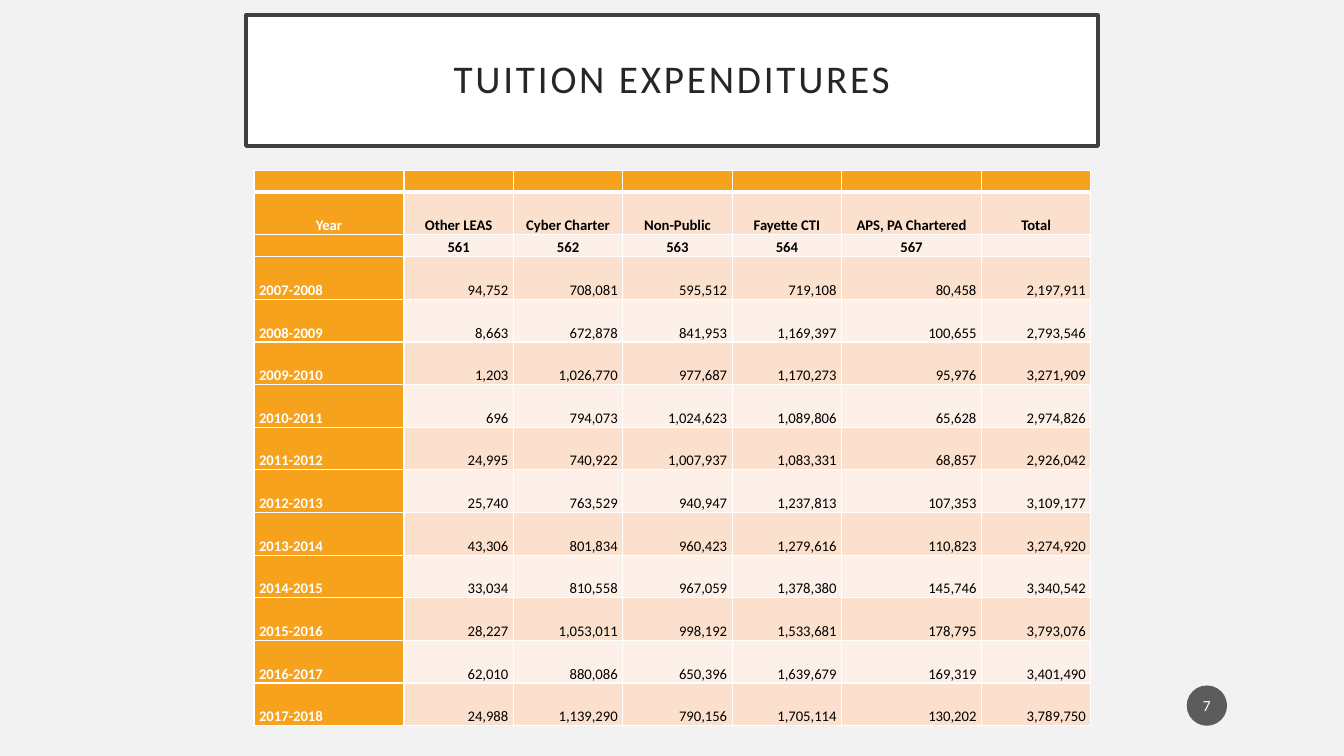
import pptx
import pptx.util
import pptx.dml.color
import pptx.enum.shapes
import pptx.enum.text
import pptx.oxml

COLORS = {
    "page": "F2F2F2", "white": "FFFFFF", "black": "000000",
    "frame": "404040", "title": "262626", "badge": "1D1D1D",
    "orange": "F6A21D", "band_dark": "FBE0CD", "band_light": "FDF0E8",
}
NS = 'xmlns:a="http://schemas.openxmlformats.org/drawingml/2006/main"'
ALIGN = pptx.enum.text.PP_ALIGN
ANCHOR = pptx.enum.text.MSO_ANCHOR
SHAPE = pptx.enum.shapes.MSO_SHAPE

EXPENDITURES = [
    ["", "", "", "", "", "", ""],
    ["Year", "Other LEAS", "Cyber Charter", "Non-Public", "Fayette CTI", "APS, PA Chartered", "Total"],
    ["", "561", "562", "563", "564", "567", ""],
    ["2007-2008", "94,752", "708,081", "595,512", "719,108", "80,458", "2,197,911"],
    ["2008-2009", "8,663", "672,878", "841,953", "1,169,397", "100,655", "2,793,546"],
    ["2009-2010", "1,203", "1,026,770", "977,687", "1,170,273", "95,976", "3,271,909"],
    ["2010-2011", "696", "794,073", "1,024,623", "1,089,806", "65,628", "2,974,826"],
    ["2011-2012", "24,995", "740,922", "1,007,937", "1,083,331", "68,857", "2,926,042"],
    ["2012-2013", "25,740", "763,529", "940,947", "1,237,813", "107,353", "3,109,177"],
    ["2013-2014", "43,306", "801,834", "960,423", "1,279,616", "110,823", "3,274,920"],
    ["2014-2015", "33,034", "810,558", "967,059", "1,378,380", "145,746", "3,340,542"],
    ["2015-2016", "28,227", "1,053,011", "998,192", "1,533,681", "178,795", "3,793,076"],
    ["2016-2017", "62,010", "880,086", "650,396", "1,639,679", "169,319", "3,401,490"],
    ["2017-2018", "24,988", "1,139,290", "790,156", "1,705,114", "130,202", "3,789,750"],
]
HEADER_ROWS = 3


def rgb(name):
    return pptx.dml.color.RGBColor.from_string(COLORS[name])


class Deck:
    """Slide style; all lengths are percentages of the slide's size."""
    font = "Calibri"

    def __init__(self):
        self.prs = pptx.Presentation()
        self.prs.slide_width = pptx.util.Inches(13.33)
        self.prs.slide_height = pptx.util.Inches(7.5)
        self.s = self.prs.slides.add_slide(self.prs.slide_layouts[6])
        self.s.background.fill.solid()
        self.s.background.fill.fore_color.rgb = rgb("page")

    def x(self, share):
        return round(self.prs.slide_width * share / 100)

    def y(self, share):
        return round(self.prs.slide_height * share / 100)

    def box(self, left, top, width, height):
        return self.x(left), self.y(top), self.x(width), self.y(height)

    def text(self, p, text, size, color, align, bold=False, leading=None, spacing=0):
        p.alignment = align
        p.line_spacing = leading
        p.font.name = self.font
        p.font.size = pptx.util.Pt(size)
        p.font.bold = bold
        p.font.color.rgb = rgb(color)
        if text:
            r = p.add_run()
            r.text = text
            if spacing:
                r._r.get_or_add_rPr().set("spc", str(spacing * 100))

    def shape(self, kind, at, fill, text, size, color, insets, line=None, alpha=None, **style):
        sp = self.s.shapes.add_shape(kind, *self.box(*at))
        sp.shadow.inherit = False
        sp.fill.solid()
        sp.fill.fore_color.rgb = rgb(fill)
        if alpha:
            clr = sp._element.spPr.find(".//{*}solidFill/{*}srgbClr")
            clr.append(pptx.oxml.parse_xml(f'<a:alpha {NS} val="{alpha * 1000}"/>'))
        if line:
            sp.line.color.rgb = rgb(line)
            sp.line.width = pptx.util.Pt(2.5)
        else:
            sp.line.fill.background()
        tf = sp.text_frame
        tf.word_wrap = True
        tf.vertical_anchor = ANCHOR.MIDDLE
        tf.margin_left = tf.margin_right = pptx.util.Inches(insets[0])
        tf.margin_top = tf.margin_bottom = pptx.util.Inches(insets[1])
        self.text(tf.paragraphs[0], text, size, color, ALIGN.CENTER, **style)

    def cell(self, cell, text, fill, color, align, bold, borders):
        tcPr = cell._tc.get_or_add_tcPr()
        for side, width in zip("LRTB", borders):
            tcPr.append(pptx.oxml.parse_xml(
                f'<a:ln{side} {NS} w="{pptx.util.Pt(width)}"><a:solidFill>'
                f'<a:srgbClr val="{COLORS["white"]}"/></a:solidFill></a:ln{side}>'))
        cell.fill.solid()
        cell.fill.fore_color.rgb = rgb(fill)
        cell.vertical_anchor = ANCHOR.BOTTOM
        cell.margin_left = cell.margin_right = pptx.util.Inches(0.05)
        cell.margin_top = cell.margin_bottom = 0
        self.text(cell.text_frame.paragraphs[0], text, 10.5, color, align, bold, 1.07)

    def table(self, left, top, widths, heights, rows):
        at = self.box(left, top, sum(widths), sum(heights))
        table = self.s.shapes.add_table(len(rows), len(widths), *at).table
        table.first_row = table.horz_banding = False
        for column, width in zip(table.columns, widths):
            column.width = self.x(width)
        for i, (row, height) in enumerate(zip(rows, heights)):
            table.rows[i].height = self.y(height)
            band = "band_dark" if i % 2 else "band_light"
            # The rule under the top strip is thicker
            borders = 1, 1, 3 if i == 1 else 1, 3 if i == 0 else 1
            for j, text in enumerate(row):
                header, year = i < HEADER_ROWS, j == 0
                align = ALIGN.CENTER if header else ALIGN.LEFT if year else ALIGN.RIGHT
                self.cell(table.cell(i, j), text, "orange" if year or i == 0 else band,
                          "white" if year else "black", align, header or year, borders)


def main():
    deck = Deck()

    # Title
    deck.shape(SHAPE.RECTANGLE, (18.3, 2, 63.4, 17.33), "white", "TUITION EXPENDITURES",
               28, "title", (0.2, 0.2), line="frame", leading=0.9, spacing=2)

    # Expenditure table
    widths = [11.16] + [8.14] * 4 + [10.41, 8.14]
    heights = [2.9, 5.64, 2.9] + [5.64] * (len(EXPENDITURES) - HEADER_ROWS)
    deck.table(18.9, 22.53, widths, heights, EXPENDITURES)

    # Slide number
    deck.shape(SHAPE.OVAL, (88.3, 90.67, 3, 5.33), "badge", "7", 11, "white",
               (0.02, 0.05), alpha=70)

    deck.prs.save("out.pptx")


if __name__ == "__main__":
    main()
